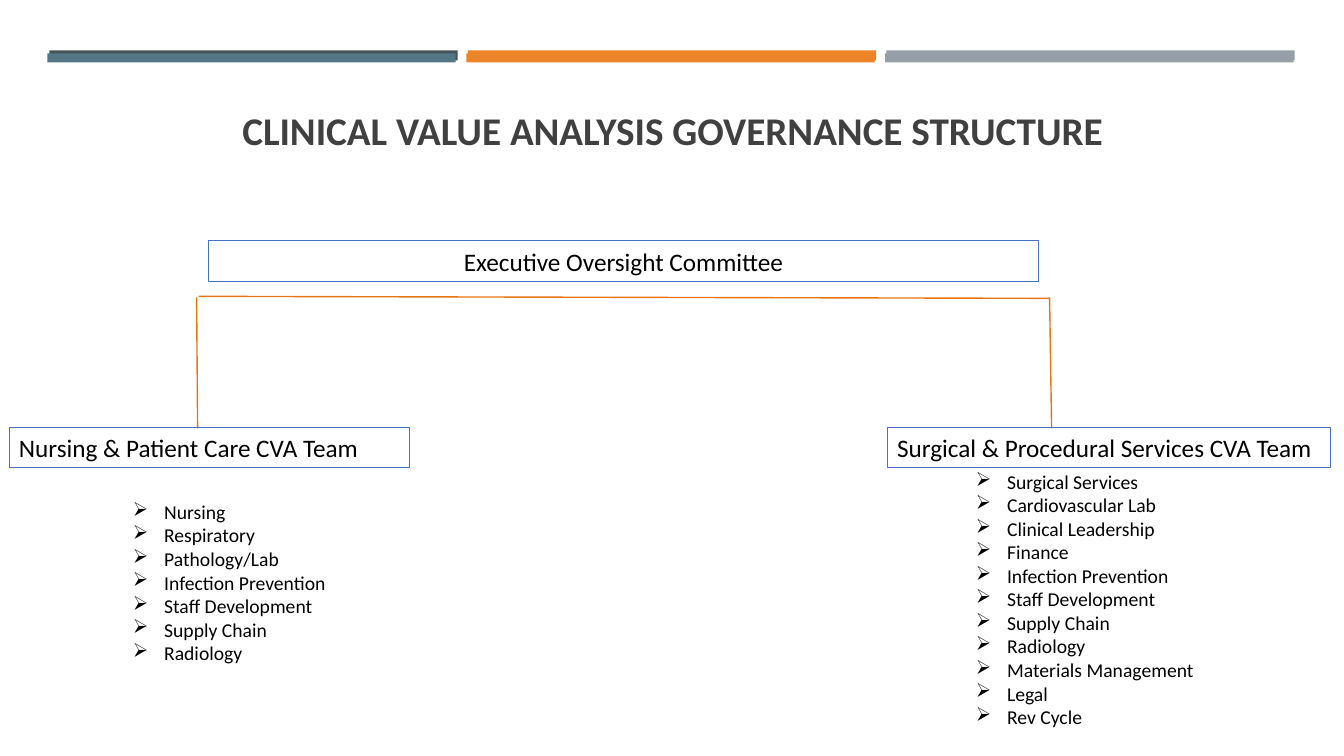
from lxml.etree import SubElement
from pptx import Presentation
from pptx.dml.color import RGBColor
from pptx.enum.shapes import MSO_CONNECTOR, MSO_SHAPE
from pptx.enum.text import MSO_ANCHOR, PP_ALIGN
from pptx.oxml.ns import qn
from pptx.util import Inches, Pt

COLORS = {
    "slate": "465359", "teal": "537685", "orange": "ED8428", "gray": "969FA7",
    "title": "404040", "text": "000000", "outline": "4472C4", "branch": "E67613",
}
FONT = "Calibri"
NURSING_MEMBERS = [
    "Nursing", "Respiratory", "Pathology/Lab", "Infection Prevention",
    "Staff Development", "Supply Chain", "Radiology",
]
SURGICAL_MEMBERS = [
    "Surgical Services", "Cardiovascular Lab", "Clinical Leadership", "Finance",
    "Infection Prevention", "Staff Development", "Supply Chain", "Radiology",
    "Materials Management", "Legal", "Rev Cycle",
]


def color(name):
    """Return the named colour."""
    return RGBColor.from_string(COLORS[name])


def style(paragraph, size, color_name="text", bold=False):
    """Format the runs of a paragraph."""
    for run in paragraph.runs:
        run.font.name = FONT
        run.font.size = Pt(size)
        run.font.bold = bold
        run.font.color.rgb = color(color_name)


def add_bars(slide, left, top, pitch, height, fills):
    """Draw a row of equal header bars."""
    for index, fill in enumerate(fills):
        bar = slide.shapes.add_shape(
            MSO_SHAPE.RECTANGLE, Inches(left + index * pitch), Inches(top),
            Inches(4.05), Inches(height))
        bar.shadow.inherit = False
        bar.fill.solid()
        bar.fill.fore_color.rgb = color(fill)
        bar.line.fill.background()


def add_title(slide, left, top, width, height, wording):
    """Place and format the slide title."""
    title = slide.shapes.title
    title.left, title.top = Inches(left), Inches(top)
    title.width, title.height = Inches(width), Inches(height)
    title.text_frame.text = wording
    title.text_frame.vertical_anchor = MSO_ANCHOR.BOTTOM
    heading = title.text_frame.paragraphs[0]
    heading.alignment = PP_ALIGN.CENTER
    style(heading, 28, "title", bold=True)


def add_group(slide, left, top, width, name, alignment=PP_ALIGN.LEFT):
    """Draw an outlined box that names a committee or team."""
    group = slide.shapes.add_shape(
        MSO_SHAPE.RECTANGLE, Inches(left), Inches(top), Inches(width), Inches(0.4))
    group.shadow.inherit = False
    group.fill.background()
    group.line.color.rgb = color("outline")
    group.line.width = Pt(0.75)
    group.text_frame.word_wrap = True
    group.text_frame.text = name
    label = group.text_frame.paragraphs[0]
    label.alignment = alignment
    style(label, 18)


def add_members(slide, left, top, width, height, members):
    """List the members of a team with arrow bullets."""
    roster = slide.shapes.add_textbox(
        Inches(left), Inches(top), Inches(width), Inches(height)).text_frame
    roster.word_wrap = True
    roster.text = "\n".join(members)
    for member in roster.paragraphs:
        properties = member._p.get_or_add_pPr()
        properties.set("marL", str(Inches(0.31)))
        properties.set("indent", str(-Inches(0.31)))
        SubElement(properties, qn("a:buChar"), char="➢")
        style(member, 14)


def add_branches(slide, left, top, width, height):
    """Draw the lines that lead from the committee to both teams."""
    right, bottom = left + width, top + height
    for start_x, start_y, end_x, end_y in [
        (left + 0.02, top - 0.01, right, top + 0.01),
        (right, top, right + 0.02, bottom),
        (left, top, left + 0.01, bottom),
    ]:
        branch = slide.shapes.add_connector(
            MSO_CONNECTOR.STRAIGHT, Inches(start_x), Inches(start_y),
            Inches(end_x), Inches(end_y))
        branch.line.color.rgb = color("branch")
        branch.line.width = Pt(1)
        SubElement(branch._element.spPr, qn("a:effectLst"))


def build_governance(slide):
    """Lay out the governance structure slide."""
    add_bars(slide, 0.49, 0.5, 4.15, 0.1, ["slate", "orange", "gray"])
    add_bars(slide, 0.47, 0.53, 4.155, 0.09, ["teal", "orange", "gray"])
    add_title(slide, 0.64, 0.97, 12.06, 0.6,
              "CLINICAL VALUE ANALYSIS GOVERNANCE STRUCTURE")
    add_members(slide, 1.22, 4.91, 3.23, 1.76, NURSING_MEMBERS)
    add_members(slide, 9.58, 4.61, 2.85, 2.71, SURGICAL_MEMBERS)
    add_branches(slide, 1.95, 2.95, 8.46, 1.3)
    add_group(slide, 2.07, 2.39, 8.23, "Executive Oversight Committee", PP_ALIGN.CENTER)
    add_group(slide, 0.09, 4.24, 3.97, "Nursing & Patient Care CVA Team")
    add_group(slide, 8.8, 4.24, 4.4, "Surgical & Procedural Services CVA Team")


def main():
    """Create and save the presentation."""
    presentation = Presentation()
    presentation.slide_width = Inches(13.33)
    presentation.slide_height = Inches(7.5)
    build_governance(presentation.slides.add_slide(presentation.slide_layouts[5]))
    presentation.save("out.pptx")


if __name__ == "__main__":
    main()
